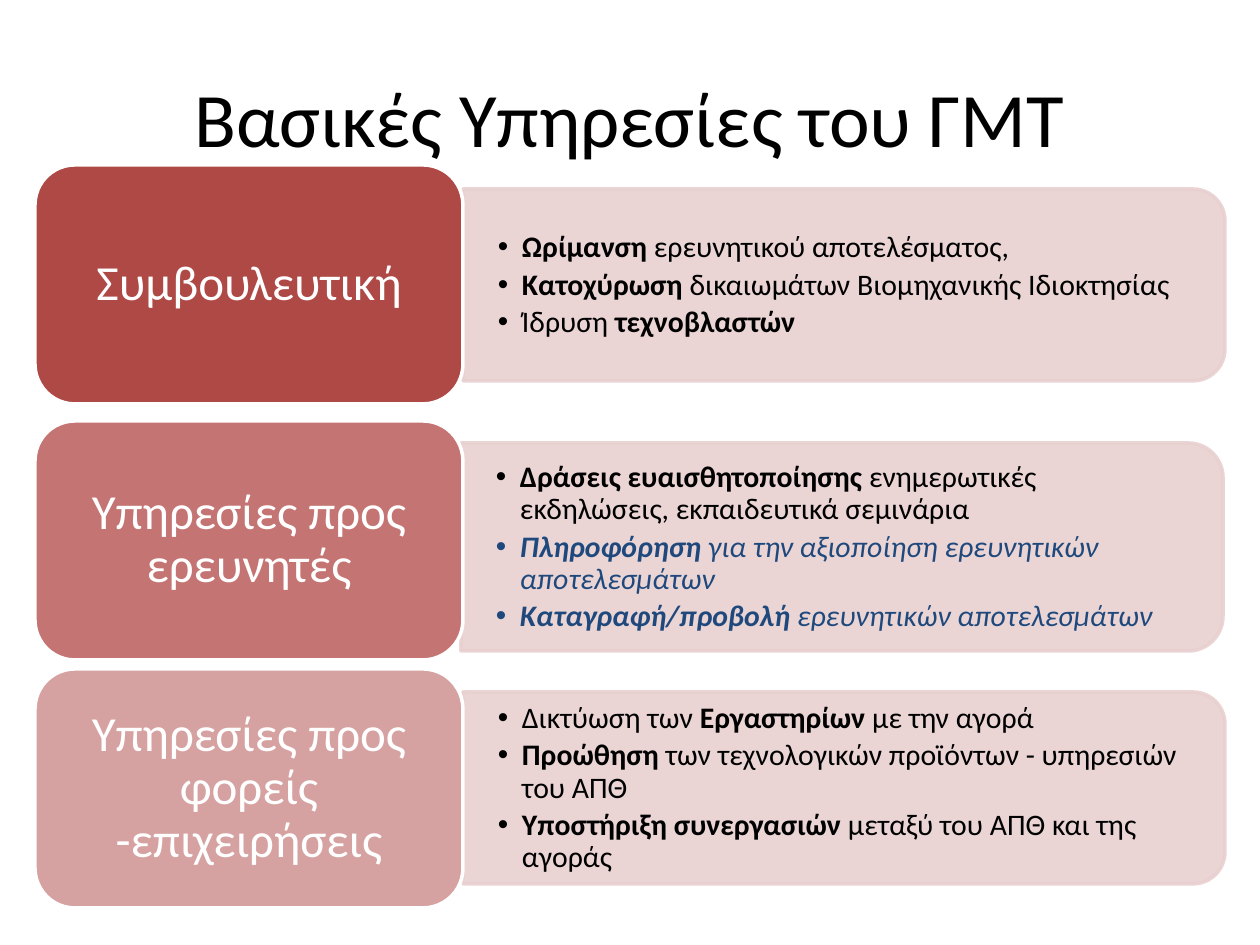
from lxml import etree
from pptx import Presentation
from pptx.dml.color import RGBColor
from pptx.enum.shapes import MSO_SHAPE as Shape
from pptx.enum.text import MSO_ANCHOR as Anchor, PP_ALIGN as Align
from pptx.oxml.ns import qn
from pptx.util import Pt

PX = 914400 // 126
BLACK = RGBColor(0, 0, 0)
WHITE = RGBColor(255, 255, 255)
PINK = RGBColor(0xE8, 0xD0, 0xD0)
BLUE = RGBColor(0x1F, 0x49, 0x7D)
DARK = RGBColor(0xAE, 0x49, 0x46)
MID = RGBColor(0xC4, 0x74, 0x72)
LIGHT = RGBColor(0xD6, 0xA2, 0xA1)

# Each row: label, fill, label top, panel centre x and y, panel depth, points.
# Each point: colour, then runs as (text, bold).
ROWS = [
    ("Συμβουλευτική", DARK, 165, 844, 285, 192, [
        (BLACK, [("Ωρίμανση", True), (" ερευνητικού αποτελέσματος,", False)]),
        (BLACK, [("Κατοχύρωση ", True),
                 ("δικαιωμάτων Βιομηχανικής Ιδιοκτησίας", False)]),
        (BLACK, [("Ίδρυση ", False), ("τεχνοβλαστών", True)]),
    ]),
    ("Υπηρεσίες προς ερευνητές", MID, 421, 842, 547, 208, [
        (BLACK, [("Δράσεις ευαισθητοποίησης ", True),
                 ("ενημερωτικές εκδηλώσεις, εκπαιδευτικά σεμινάρια", False)]),
        (BLUE, [("Πληροφόρηση", True),
                (" για την αξιοποίηση ερευνητικών αποτελεσμάτων", False)]),
        (BLUE, [("Καταγραφή/προβολή", True),
                (" ερευνητικών αποτελεσμάτων", False)]),
    ]),
    ("Υπηρεσίες προς φορείς -επιχειρήσεις", LIGHT, 669, 844, 788, 192, [
        (BLACK, [("Δικτύωση των ", False), ("Εργαστηρίων", True),
                 (" με την αγορά", False)]),
        (BLACK, [("Προώθηση", True),
                 (" των τεχνολογικών προϊόντων - υπηρεσιών του ΑΠΘ", False)]),
        (BLACK, [("Υποστήριξη συνεργασιών", True),
                 (" μεταξύ του ΑΠΘ και της αγοράς", False)]),
    ]),
]


def scale(*sizes):
    """Turn px lengths into EMU."""
    return [size * PX for size in sizes]


def set_frame(shape, side, edge):
    """Wrap and centre the text of a shape within its margins."""
    frame = shape.text_frame
    frame.word_wrap = True
    frame.vertical_anchor = Anchor.MIDDLE
    frame.margin_left = frame.margin_right = side * PX
    frame.margin_top = frame.margin_bottom = edge * PX
    return frame


def add_run(para, text, size, color, bold=False, italic=False):
    """Add one styled run to a paragraph."""
    run = para.add_run()
    run.text = text
    font = run.font
    font.name, font.size = "Calibri", Pt(size)
    font.bold, font.italic = bold, italic
    font.color.rgb = color


def add_block(slide, kind, box, fill, line):
    """Add a filled and outlined preset shape."""
    shape = slide.shapes.add_shape(kind, *scale(*box))
    shape.shadow.inherit = False
    shape.fill.solid()
    shape.fill.fore_color.rgb = fill
    shape.line.color.rgb = line
    shape.line.width = Pt(2)
    return shape


def add_title(slide, text):
    """Add the slide title."""
    box = slide.shapes.add_textbox(*scale(63, 38, 1134, 158))
    para = set_frame(box, 13, 6).paragraphs[0]
    para.alignment = Align.CENTER
    add_run(para, text, 44, BLACK)


def add_panel(slide, mid_x, mid_y, depth):
    """Add a see-through panel rounded on its right side."""
    span = 762
    box = (mid_x - depth // 2, mid_y - span // 2, depth, span)
    panel = add_block(slide, Shape.ROUND_2_SAME_RECTANGLE, box, PINK, PINK)
    panel.rotation = 90
    for color in panel._element.spPr.iter(qn("a:srgbClr")):
        etree.SubElement(color, qn("a:alpha"), val="90000")


def add_points(slide, mid_x, mid_y, depth, points):
    """Add the bulleted text of a panel."""
    high = depth - 19
    box = slide.shapes.add_textbox(
        *scale(mid_x - 380, mid_y - high // 2, 752, high))
    frame = set_frame(box, 34, 18)
    for i, (color, runs) in enumerate(points):
        para = frame.paragraphs[0] if i == 0 else frame.add_paragraph()
        para.line_spacing = 0.9
        para.space_after = Pt(3)
        props = para._p.get_or_add_pPr()
        props.set("marL", str(24 * PX))
        props.set("indent", str(-24 * PX))
        etree.SubElement(props, qn("a:buFont"), typeface="Arial")
        etree.SubElement(props, qn("a:buChar"), char="•")
        for text, bold in runs:
            add_run(para, text, 17, color, bold, color == BLUE)


def add_label(slide, top, text, fill):
    """Add the rounded label at the left of a row."""
    label = add_block(slide, Shape.ROUNDED_RECTANGLE,
                      (35, top, 428, 239), fill, WHITE)
    para = set_frame(label, 15, 8).paragraphs[0]
    para.alignment = Align.CENTER
    para.line_spacing = 0.9
    add_run(para, text, 28, WHITE)


def main():
    """Build the slide and save it."""
    deck = Presentation()
    deck.slide_width, deck.slide_height = scale(1260, 945)
    slide = deck.slides.add_slide(deck.slide_layouts[6])
    add_title(slide, "Βασικές Υπηρεσίες του ΓΜΤ")
    for text, fill, top, mid_x, mid_y, depth, points in ROWS:
        add_panel(slide, mid_x, mid_y, depth)
        add_points(slide, mid_x, mid_y, depth, points)
        add_label(slide, top, text, fill)
    deck.save("out.pptx")


if __name__ == "__main__":
    main()
